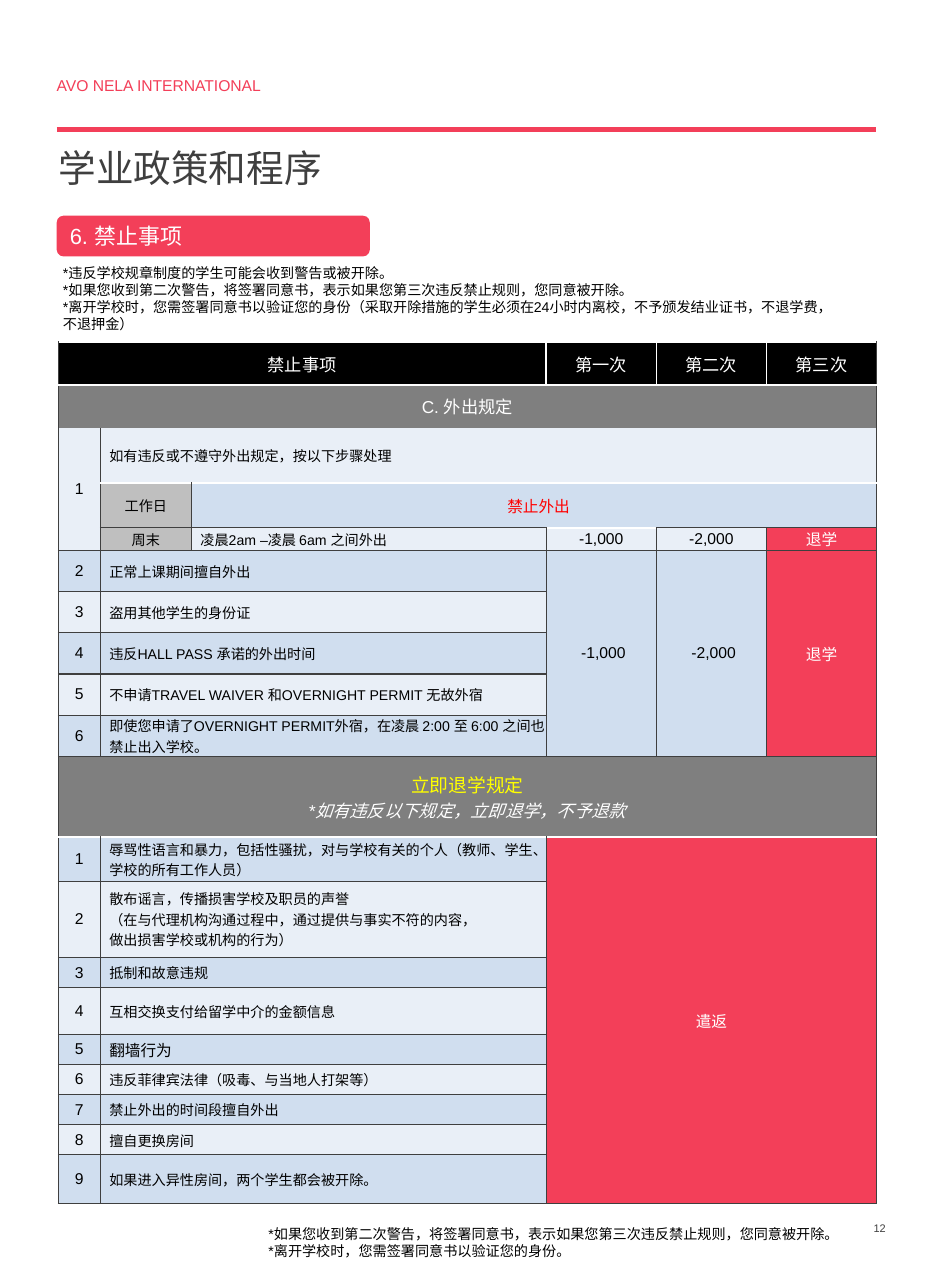
from dataclasses import dataclass, replace

from lxml.etree import SubElement
from pptx import Presentation
from pptx.dml.color import RGBColor
from pptx.enum.shapes import MSO_CONNECTOR, MSO_SHAPE
from pptx.enum.text import MSO_ANCHOR as ANCHOR, PP_ALIGN as ALIGN
from pptx.oxml.ns import qn
from pptx.util import Pt

RED = RGBColor(0xF3, 0x3F, 0x59)
BRIGHT_RED = RGBColor(0xFF, 0x00, 0x00)
YELLOW = RGBColor(0xFF, 0xFF, 0x00)
BLACK = RGBColor(0x00, 0x00, 0x00)
WHITE = RGBColor(0xFF, 0xFF, 0xFF)
DARK = RGBColor(0x3F, 0x3F, 0x3F)
GRAY = RGBColor(0x7F, 0x7F, 0x7F)
SILVER = RGBColor(0xBF, 0xBF, 0xBF)
PALE = RGBColor(0xE9, 0xEF, 0xF7)
BLUE = RGBColor(0xD0, 0xDE, 0xEF)

BOX_INSETS = (7.2, 3.6, 7.2, 3.6)
NO_INSETS = (0, 0, 0, 0)
RULE_INSETS = (5.8, 0, 0, 0)
HEADING_INSETS = (0, 0, 0, 3.6)

COLUMN_WIDTHS = [26.8, 58.2, 226.4, 70.3, 70.3, 70.3]
ROW_HEIGHTS = [27.4, 27.4, 35.2, 28.8, 14.4, *[26.3] * 5, 51.6,
               28.1, 48.8, 19.2, 29.8, 19.2, 19.2, 19.2, 19.2, 31]

POLICY_NOTES = [
    "*违反学校规章制度的学生可能会收到警告或被开除。",
    "*如果您收到第二次警告，将签署同意书，表示如果您第三次违反禁止规则，您同意被开除。",
    "*离开学校时，您需签署同意书以验证您的身份（采取开除措施的学生必须在24小时内离校，"
    "不予颁发结业证书，不退学费，不退押金）",
]
FOOTER_NOTES = [POLICY_NOTES[1], "*离开学校时，您需签署同意书以验证您的身份。"]
OUTING_RULES = [
    "正常上课期间擅自外出",
    "盗用其他学生的身份证",
    "违反HALL PASS 承诺的外出时间",
    "不申请TRAVEL WAIVER 和OVERNIGHT PERMIT 无故外宿",
    "即使您申请了OVERNIGHT PERMIT外宿，在凌晨 2:00 至 6:00 之间也禁止出入学校。",
]
EXPULSION_RULES = [
    "辱骂性语言和暴力，包括性骚扰，对与学校有关的个人（教师、学生、学校的所有工作人员）",
    "散布谣言，传播损害学校及职员的声誉\n"
    "（在与代理机构沟通过程中，通过提供与事实不符的内容，\n做出损害学校或机构的行为）",
    "抵制和故意违规",
    "互相交换支付给留学中介的金额信息",
    "翻墙行为",
    "违反菲律宾法律（吸毒、与当地人打架等）",
    "禁止外出的时间段擅自外出",
    "擅自更换房间",
    "如果进入异性房间，两个学生都会被开除。",
]


@dataclass
class CellStyle:
    fill: RGBColor
    color: RGBColor = BLACK
    size: float = 10
    align: ALIGN = ALIGN.CENTER
    insets: tuple = NO_INSETS


HEADER = CellStyle(BLACK, WHITE, 11, insets=BOX_INSETS)
BANNER = CellStyle(GRAY, WHITE, 11, insets=BOX_INSETS)
RULE = CellStyle(PALE, size=9, align=ALIGN.LEFT, insets=RULE_INSETS)
NUMBER = CellStyle(PALE, insets=BOX_INSETS)
DAY = CellStyle(SILVER, size=9)
PENALTY = CellStyle(PALE)
EXPELLED = CellStyle(RED, WHITE)


def format_text(frame, size, color, align=ALIGN.LEFT, spacing=None):
    for paragraph in frame.paragraphs:
        paragraph.alignment = align
        if spacing:
            paragraph.line_spacing = spacing
        for run in paragraph.runs:
            run.font.name = "Arial"
            run.font.size = Pt(size)
            run.font.bold = False
            run.font.color.rgb = color


def set_insets(target, insets):
    for side, inset in zip(("left", "top", "right", "bottom"), insets):
        setattr(target, f"margin_{side}", Pt(inset))


def add_text(slide, box, text, size, color, insets=BOX_INSETS,
             anchor=ANCHOR.TOP, align=ALIGN.LEFT, spacing=None):
    frame = slide.shapes.add_textbox(*map(Pt, box)).text_frame
    frame.word_wrap = True
    frame.vertical_anchor = anchor
    set_insets(frame, insets)
    frame.text = text
    format_text(frame, size, color, align, spacing)


def add_rule_line(slide):
    line = slide.shapes.add_connector(
        MSO_CONNECTOR.STRAIGHT, Pt(36.3), Pt(82.8), Pt(559), Pt(82.8))
    line.line.color.rgb = RED
    line.line.width = Pt(3)
    SubElement(line._element.spPr, qn("a:effectLst"))


def add_section_tag(slide, text):
    tag = slide.shapes.add_shape(
        MSO_SHAPE.ROUNDED_RECTANGLE, Pt(36.2), Pt(137.7), Pt(199.8), Pt(26))
    tag.shadow.inherit = False
    tag.fill.solid()
    tag.fill.fore_color.rgb = RED
    tag.line.fill.background()
    tag.text_frame.vertical_anchor = ANCHOR.MIDDLE
    tag.text_frame.text = text
    format_text(tag.text_frame, 14, WHITE)


def set_border(cell, side, color):
    """Draw one side of a cell; a color of None leaves that side open."""
    width = 1 if color == WHITE else 0.75
    properties = cell._tc.get_or_add_tcPr()
    border = SubElement(properties, qn(f"a:ln{side}"), w=str(Pt(width)))
    if color is None:
        SubElement(border, qn("a:noFill"))
    else:
        fill = SubElement(border, qn("a:solidFill"))
        SubElement(fill, qn("a:srgbClr"), val=str(color))


def put(table, row, col, text, style, rows=1, cols=1, **edges):
    """Fill a cell or merged block; edges L, R, T, B override the dark border."""
    last_row, last_col = row + rows - 1, col + cols - 1
    for r in range(row, last_row + 1):
        for c in range(col, last_col + 1):
            outer = {"L": c == col, "R": c == last_col,
                     "T": r == row, "B": r == last_row}
            is_origin = (r, c) == (row, col)
            part = table.cell(r, c)
            for side, is_outer in outer.items():
                # The first cell of a block carries the frame of the whole block.
                if is_outer or is_origin:
                    set_border(part, side, edges.get(side, DARK))
            part.fill.solid()
            part.fill.fore_color.rgb = style.fill
    cell = table.cell(row, col)
    if rows * cols > 1:
        cell.merge(table.cell(last_row, last_col))
    cell.vertical_anchor = ANCHOR.MIDDLE
    set_insets(cell, style.insets)
    cell.text_frame.text = text
    format_text(cell.text_frame, style.size, style.color, style.align)
    return cell


def put_rules(table, first_row, first_number, rules, **first_edges):
    for index, rule in enumerate(rules):
        number = first_number + index
        fill = PALE if index % 2 else BLUE
        size = 10 if rule == "翻墙行为" else 9
        edges = first_edges if index == 0 else {}
        row = first_row + index
        put(table, row, 0, str(number), replace(NUMBER, fill=fill), **edges)
        put(table, row, 1, rule, replace(RULE, fill=fill, size=size), cols=2, **edges)


def put_header(table):
    put(table, 0, 0, "禁止事项", HEADER, cols=3, T=WHITE, R=WHITE, B=WHITE)
    for col, text in enumerate(["第一次", "第二次", "第三次"], start=3):
        right = DARK if col == 5 else WHITE
        put(table, 0, col, text, HEADER, L=WHITE, T=WHITE, R=right, B=WHITE)


def put_outing_section(table):
    put(table, 1, 0, "C. 外出规定", BANNER, cols=6, T=WHITE, B=None)
    put(table, 2, 0, "1", NUMBER, rows=3, T=None)
    put(table, 2, 1, "如有违反或不遵守外出规定，按以下步骤处理", RULE, cols=5,
        T=None, B=WHITE)
    put(table, 3, 1, "工作日", DAY)
    no_outing = CellStyle(BLUE, BRIGHT_RED, insets=RULE_INSETS)
    put(table, 3, 2, "禁止外出", no_outing, cols=4, T=WHITE)
    put(table, 4, 1, "周末", DAY)
    put(table, 4, 2, "凌晨2am –凌晨 6am 之间外出", RULE)
    put(table, 4, 3, "-1,000", PENALTY, T=WHITE)
    put(table, 4, 4, "-2,000", PENALTY)
    put(table, 4, 5, "退学", EXPELLED)
    put_rules(table, 5, 2, OUTING_RULES)
    shared_penalty = replace(PENALTY, fill=BLUE)
    put(table, 5, 3, " -1,000", shared_penalty, rows=5)
    put(table, 5, 4, " -2,000", shared_penalty, rows=5)
    put(table, 5, 5, "退学", EXPELLED, rows=5)


def put_expulsion_section(table):
    banner = put(table, 10, 0, "立即退学规定\n*如有违反以下规定，立即退学，不予退款",
                 BANNER, cols=6, B=WHITE)
    heading, remark = [p.runs[0].font for p in banner.text_frame.paragraphs]
    heading.size = Pt(12)
    heading.color.rgb = YELLOW
    remark.italic = True
    put_rules(table, 11, 1, EXPULSION_RULES, T=WHITE)
    put(table, 11, 3, "遣返", EXPELLED, rows=9, cols=3, T=WHITE)


def add_prohibitions_table(slide):
    table = slide.shapes.add_table(
        len(ROW_HEIGHTS), len(COLUMN_WIDTHS), Pt(37.2), Pt(218.3),
        Pt(sum(COLUMN_WIDTHS)), Pt(sum(ROW_HEIGHTS))).table
    for column, width in zip(table.columns, COLUMN_WIDTHS):
        column.width = Pt(width)
    for row, height in zip(table.rows, ROW_HEIGHTS):
        row.height = Pt(height)
    # Empty merged cells must not stretch the low rows.
    for cell in table.iter_cells():
        set_insets(cell, NO_INSETS)
        cell.text_frame.paragraphs[0].font.size = Pt(8)
    put_header(table)
    put_outing_section(table)
    put_expulsion_section(table)


def main():
    deck = Presentation()
    deck.slide_width, deck.slide_height = Pt(595.44), Pt(822.24)
    slide = deck.slides.add_slide(deck.slide_layouts[6])
    add_text(slide, (36.2, 41, 160, 18.7), "AVO NELA INTERNATIONAL", 10, RED,
             HEADING_INSETS, spacing=1.6)
    add_rule_line(slide)
    add_text(slide, (37.4, 99, 437, 25.2), "学业政策和程序", 24, DARK,
             HEADING_INSETS, spacing=0.75)
    add_text(slide, (438.5, 761.8, 133.9, 43.9), "12", 7, DARK,
             anchor=ANCHOR.MIDDLE, align=ALIGN.RIGHT)
    add_prohibitions_table(slide)
    add_section_tag(slide, "6. 禁止事项")
    add_text(slide, (33.1, 165.4, 498, 51.1), "\n".join(POLICY_NOTES), 9, BLACK)
    add_text(slide, (164.2, 779, 409, 28.8), "\n".join(FOOTER_NOTES), 9, BLACK)
    deck.save("out.pptx")


if __name__ == "__main__":
    main()
